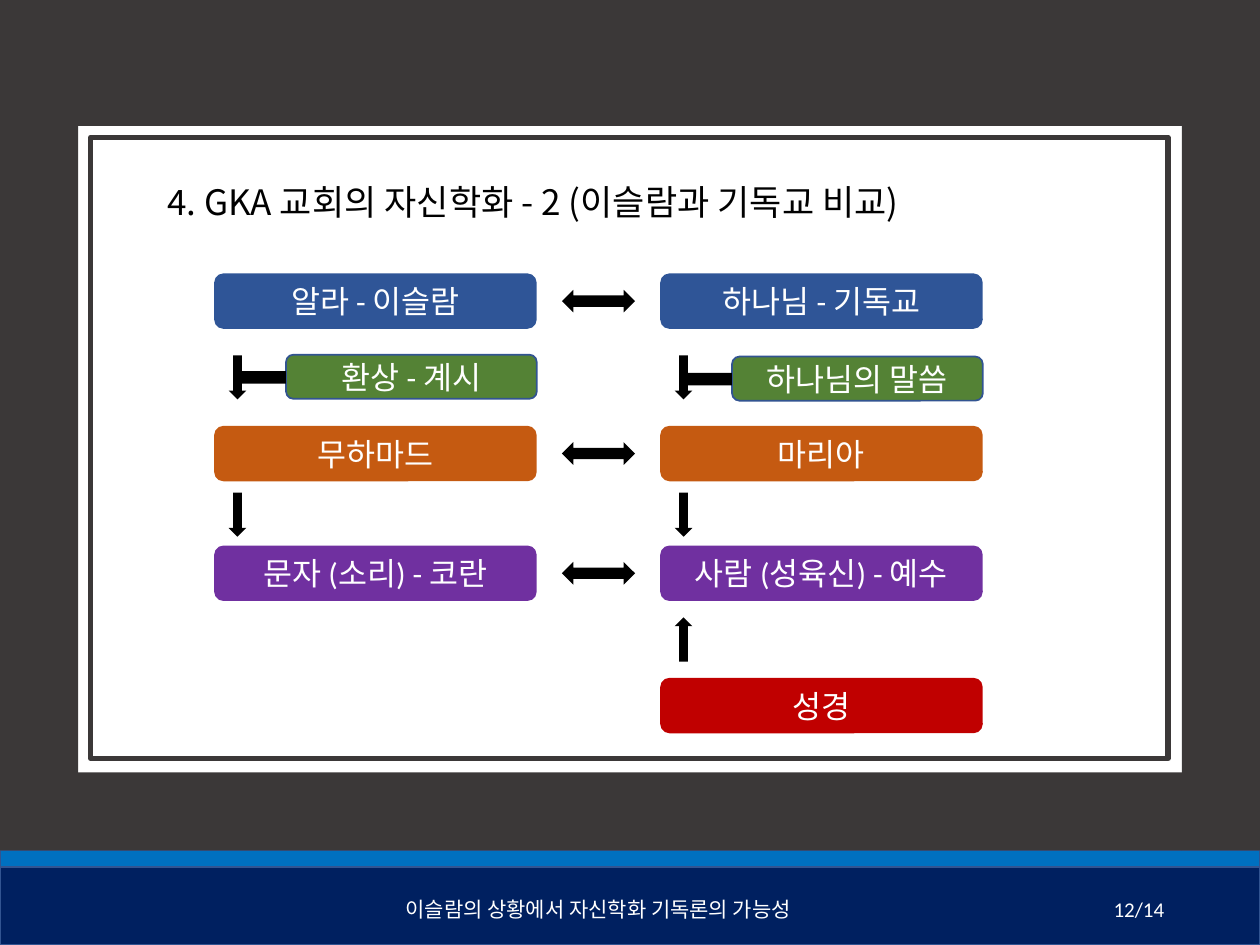
import pptx
import pptx.util
import pptx.dml.color
import pptx.enum.shapes
import pptx.enum.text
import lxml.etree

RGBColor = pptx.dml.color.RGBColor
SHAPES = pptx.enum.shapes.MSO_SHAPE
BLACK = RGBColor(0x00, 0x00, 0x00)
WHITE = RGBColor(0xFF, 0xFF, 0xFF)
CHARCOAL = RGBColor(0x3B, 0x38, 0x38)
SKY = RGBColor(0x00, 0x70, 0xC0)
NAVY = RGBColor(0x00, 0x20, 0x60)
OUTLINE = RGBColor(0x32, 0x54, 0x91)
BLUE = RGBColor(0x2F, 0x55, 0x97)
GREEN = RGBColor(0x54, 0x82, 0x35)
ORANGE = RGBColor(0xC5, 0x5A, 0x11)
PURPLE = RGBColor(0x70, 0x30, 0xA0)
RED = RGBColor(0xC0, 0x00, 0x00)
KOREAN_FONT = "Noto Sans CJK KR"
LATIN_FONT = "Calibri"
COLUMNS, ROWS = 100, 75
CELL = pptx.util.Inches(10) / COLUMNS
NAMESPACE = "http://schemas.openxmlformats.org/drawingml/2006/main"


def within(box, left, top, width, height):
    return box[0] + left, box[1] + top, width, height


def to_emu(box):
    return [round(value * CELL) for value in box]


def add_run(paragraph, text, size, color, font):
    run = paragraph.add_run()
    run.text = text
    run.font.size = pptx.util.Pt(size)
    run.font.color.rgb = color
    run.font.name = font
    east_asian = lxml.etree.SubElement(run.font._element, "{%s}ea" % NAMESPACE)
    east_asian.set("typeface", KOREAN_FONT)


def add_block(slide, kind, box, fill=None, line=None, line_width=1):
    shape = slide.shapes.add_shape(kind, *to_emu(box))
    shape.shadow.inherit = False
    if fill is None:
        shape.fill.background()
    else:
        shape.fill.solid()
        shape.fill.fore_color.rgb = fill
    if line is None:
        shape.line.fill.background()
    else:
        shape.line.color.rgb = line
        shape.line.width = pptx.util.Pt(line_width)
    return shape


def add_label(slide, box, text, fill, line=None):
    shape = add_block(slide, SHAPES.ROUNDED_RECTANGLE, box, fill, line)
    shape.text_frame.vertical_anchor = pptx.enum.text.MSO_ANCHOR.MIDDLE
    paragraph = shape.text_frame.paragraphs[0]
    paragraph.alignment = pptx.enum.text.PP_ALIGN.CENTER
    add_run(paragraph, text, 18, WHITE, LATIN_FONT)


def add_text(slide, box, text, size, color, font, spacing=1.0):
    frame = slide.shapes.add_textbox(*to_emu(box)).text_frame
    frame.word_wrap = True
    frame.auto_size = pptx.enum.text.MSO_AUTO_SIZE.SHAPE_TO_FIT_TEXT
    frame.paragraphs[0].line_spacing = spacing
    add_run(frame.paragraphs[0], text, size, color, font)


def draw_bands(slide, box):
    width, height = box[2:]
    stripe = 1.3
    add_block(slide, SHAPES.RECTANGLE, within(box, 0, 0, width, stripe), SKY, OUTLINE)
    add_block(slide, SHAPES.RECTANGLE, within(box, 0, stripe, width, height - stripe), NAVY, OUTLINE)


def draw_side(slide, box, names, revelation, revelation_top):
    width = box[2]
    for (text, fill), top in zip(names, (0, 12.1, 21.6, 32.1)):
        add_label(slide, within(box, 0, top, width, 4.4), text, fill)
    add_label(slide, within(box, 5.7, revelation_top, 19.9, 3.5), revelation, GREEN, OUTLINE)
    add_block(slide, SHAPES.RECTANGLE, within(box, 2, revelation_top + 1.3, 3.7, 1), BLACK)
    for top in (6.5, 17.4):
        add_block(slide, SHAPES.DOWN_ARROW, within(box, 1.15, top, 1.4, 3.5), BLACK)
    if len(names) > 3:
        arrow = add_block(slide, SHAPES.DOWN_ARROW, within(box, 1.15, 27.3, 1.4, 3.5), BLACK)
        arrow.rotation = 180


def draw_comparison(slide, box):
    label_width, height = 25.6, box[3]
    islam = [("알라 - 이슬람", BLUE), ("무하마드", ORANGE), ("문자 (소리) - 코란", PURPLE)]
    christianity = [("하나님 - 기독교", BLUE), ("마리아", ORANGE),
                    ("사람 (성육신) - 예수", PURPLE), ("성경", RED)]
    draw_side(slide, within(box, 0, 0, label_width, height), islam, "환상 - 계시", 6.45)
    draw_side(slide, within(box, box[2] - label_width, 0, label_width, height),
              christianity, "하나님의 말씀", 6.6)
    for top in (1.3, 13.4, 22.9):
        add_block(slide, SHAPES.LEFT_RIGHT_ARROW,
                  within(box, (box[2] - 5.8) / 2, top, 5.8, 1.8), BLACK)


def draw_frame(slide, box):
    width, height = box[2:]
    margin = 6.2
    for part in ((0, 0, width, 10.1),
                 (0, 7.9, margin, height - 7.9),
                 (width - margin, 7.9, margin, height - 7.9),
                 (margin, height - margin, width - 2 * margin, margin)):
        add_block(slide, SHAPES.RECTANGLE, within(box, *part), CHARCOAL)
    add_block(slide, SHAPES.RECTANGLE, within(box, 7.2, 11, 85.5, 49.3), None, CHARCOAL, 3)


def draw_footer(slide, box):
    add_text(slide, within(box, 31.2, 0, 37.6, box[3]),
             "이슬람의 상황에서 자신학화 기독론의 가능성", 12, WHITE, LATIN_FONT)
    add_text(slide, within(box, 87.4, 0, 6.4, box[3]), "12/14", 12, WHITE, LATIN_FONT)


def main():
    presentation = pptx.Presentation()
    presentation.slide_width = round(COLUMNS * CELL)
    presentation.slide_height = round(ROWS * CELL)
    slide = presentation.slides.add_slide(presentation.slide_layouts[6])
    add_text(slide, (12.3, 12.2, 81.3, 10.5),
             "4. GKA 교회의 자신학화 - 2 (이슬람과 기독교 비교)", 20, BLACK, KOREAN_FONT, 1.5)
    draw_bands(slide, (0, 67.5, COLUMNS, 7.5))
    draw_comparison(slide, (17, 21.7, 61, 36.5))
    draw_frame(slide, (0, -0.1, COLUMNS, 67.6))
    draw_footer(slide, (0, 70.7, COLUMNS, 3))
    presentation.save("out.pptx")


if __name__ == "__main__":
    main()
